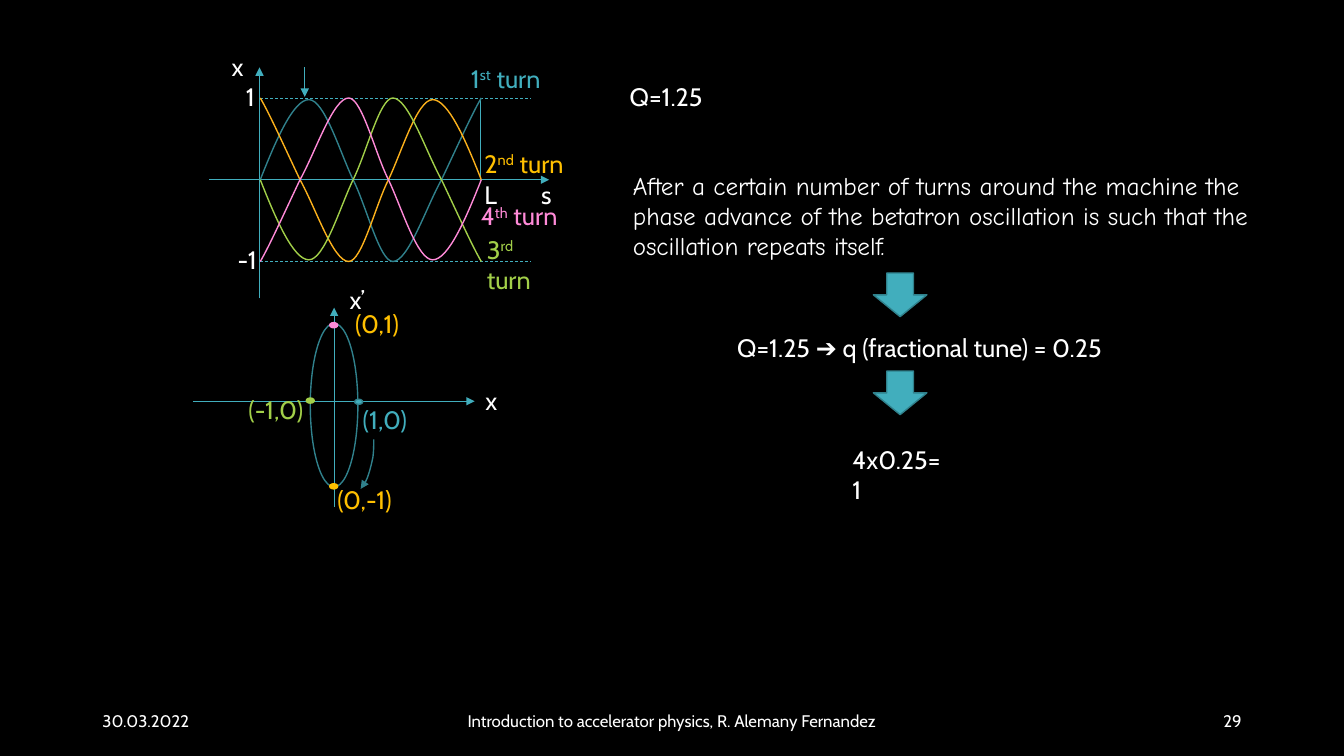
from lxml import etree
from pptx import Presentation, util as u
from pptx.dml.color import RGBColor
from pptx.enum import dml, shapes, text
from pptx.oxml.ns import qn

BLACK = RGBColor(0x00, 0x00, 0x00)
WHITE = RGBColor(0xFF, 0xFF, 0xFF)
TEAL = RGBColor(0x41, 0xAE, 0xBD)
DARK_TEAL = RGBColor(0x30, 0x81, 0x8C)
ORANGE = RGBColor(0xFC, 0xB1, 0x1C)
AMBER = RGBColor(0xFF, 0xC0, 0x00)
GREEN = RGBColor(0xA2, 0xCF, 0x49)
PINK = RGBColor(0xFF, 0x8A, 0xD8)

LABEL_HEIGHT = 1.02
FIRST_TURN = [
    (0, 0.5), (0.07, 0.26), (0.15, 0.01), (0.22, 0.01), (0.29, 0.01), (0.36, 0.33),
    (0.42, 0.5), (0.48, 0.66), (0.54, 1), (0.6, 1), (0.67, 1), (0.75, 0.67),
    (0.82, 0.5), (0.88, 0.33), (0.96, 0.09), (1, 0),
]
ROTATION = [
    (1.6, 2.92), (1.6, 3.07), (1.6, 3.2), (1.58, 3.36), (1.55, 3.53),
    (1.48, 3.79), (1.43, 3.91), (1.37, 4.04), (1.27, 4.17), (1.27, 4.17),
]


def add_label(parent, box, words, color=WHITE, wrap=False, font="Cabin", size=18,
              align=text.PP_ALIGN.LEFT, anchor=text.MSO_ANCHOR.TOP):
    """Add one paragraph of text; parts between carets are raised."""
    frame = parent.shapes.add_textbox(*map(u.Cm, box)).text_frame
    for name, value in {"word_wrap": wrap, "vertical_anchor": anchor}.items():
        setattr(frame, name, value)
    para = frame.paragraphs[0]
    para.alignment = align
    for index, part in enumerate(words.split("^")):
        span = para.add_run()
        span.text = part
        for name, value in {"name": font, "size": u.Pt(size)}.items():
            setattr(span.font, name, value)
        span.font.color.rgb = color
        if index % 2:
            span.font._element.set("baseline", "30000")


def add_labels(parent, left, top, labels):
    """Add labels given by offset, width, words, colour and wrapping."""
    for x, y, width, words, color, wrap in labels:
        add_label(parent, (left + x, top + y, width, LABEL_HEIGHT), words, color, wrap)


def add_arrowhead(line):
    """End a line in a triangle."""
    etree.SubElement(line._get_or_add_ln(), qn("a:tailEnd"), type="triangle")


def add_line(slide, left, top, ends, arrow=False, dashed=False):
    """Draw a thin straight line between two offsets."""
    x1, y1, x2, y2 = ends
    points = (left + x1, top + y1, left + x2, top + y2)
    connector = slide.shapes.add_connector(shapes.MSO_CONNECTOR.STRAIGHT, *map(u.Cm, points))
    connector.line.color.rgb = TEAL
    connector.line.width = u.Pt(0.5)
    if dashed:
        connector.line.dash_style = dml.MSO_LINE.DASH
    if arrow:
        add_arrowhead(connector.line)
    etree.SubElement(connector._element.spPr, qn("a:effectLst"))


def style_shape(shape, fill, outline):
    """Give a shape its fill and outline, without shadow."""
    shape.shadow.inherit = False
    if fill is None:
        shape.fill.background()
    else:
        shape.fill.solid()
        shape.fill.fore_color.rgb = fill
    shape.line.color.rgb = outline
    shape.line.width = u.Pt(1)


def add_preset(slide, kind, box, fill, outline):
    """Add a styled preset shape."""
    style_shape(slide.shapes.add_shape(kind, *map(u.Cm, box)), fill, outline)


def add_curve(parent, controls, color):
    """Draw an open curve through chained cubic control points."""
    start, *others = [tuple(map(u.Cm, point)) for point in controls]
    builder = parent.shapes.build_freeform(*start)
    builder.add_line_segments(others, close=False)
    curve = builder.convert_to_shape()
    segments = list(curve._element.iter(qn("a:lnTo")))
    for first in range(0, len(segments), 3):
        cubic = etree.Element(qn("a:cubicBezTo"))
        segments[first].addprevious(cubic)
        for segment in segments[first:first + 3]:
            cubic.append(segment[0])
            segment.getparent().remove(segment)
    style_shape(curve, None, color)
    return curve


def add_wave_plot(slide, box):
    """Draw the oscillation over four turns around the machine."""
    left, top, width, height = box
    middle = height / 2
    add_line(slide, left, top, (-0.02, 5.05, -0.02, -0.77), arrow=True)
    add_line(slide, left, top, (-1.28, middle, 7.28, middle), arrow=True)
    for level in (0.02, height):
        add_line(slide, left, top, (0, level, 6.83, level), dashed=True)
    add_labels(slide, left, top, [
        (-0.97, -1.3, 0.81, "x", WHITE, False),
        (6.83, 1.92, 1.47, "s", WHITE, True),
        (-0.61, -0.54, 0.81, "1", WHITE, False),
        (-0.82, 3.55, 1.02, "-1", WHITE, False),
        (5.4, 1.92, 0.84, "L", WHITE, False),
    ])
    add_line(slide, left, top, (width - 0.02, 0, width - 0.02, middle))
    turns = [
        (DARK_TEAL, False, False, (5.06, -1, 2.36, "1^st^ turn", TEAL, False)),
        (ORANGE, True, False, (5.4, 1.14, 2.54, "2^nd^ turn", AMBER, False)),
        (GREEN, False, True, (5.46, 3.31, 2.2, "3^rd^ turn", GREEN, True)),
        (PINK, True, True, (5.31, 2.46, 2.46, "4^th^ turn", PINK, False)),
    ]
    for color, mirrored, flipped, label in turns:
        turn = slide.shapes.add_group_shape()
        add_curve(turn, [
            (left + width * (1 - x if mirrored else x), top + height * (1 - y if flipped else y))
            for x, y in FIRST_TURN], color)
        add_labels(turn, left, top, [label])
    add_line(slide, left, top, (1.12, -0.77, 1.12, -0.03), arrow=True)


def add_phase_space(slide, box):
    """Draw the phase space ellipse with the position at each turn."""
    left, top, width, height = box
    add_line(slide, left, top, (0.6, 4.63, 0.6, -0.4), arrow=True)
    add_line(slide, left, top, (-2.95, 1.96, 4.14, 1.96), arrow=True)
    oval = shapes.MSO_SHAPE.OVAL
    add_preset(slide, oval, box, None, DARK_TEAL)
    dots = [(0.49, 4.04, AMBER, AMBER), (-0.1, 1.88, GREEN, GREEN),
            (0.49, -0.02, PINK, PINK), (1.12, 1.91, TEAL, DARK_TEAL)]
    for x, y, fill, outline in dots:
        add_preset(slide, oval, (left + x, top + y, 0.2, 0.13), fill, outline)
    add_labels(slide, left, top, [
        (4.16, 1.43, 0.81, "x", WHITE, False),
        (0.74, -1.11, 0.94, "x’", WHITE, False),
        (1.07, 1.91, 1.68, "(1,0)", TEAL, False),
        (0.43, 3.94, 1.91, "(0,-1)", AMBER, False),
        (-1.81, 1.65, 1.91, "(-1,0)", GREEN, False),
        (0.88, -0.5, 1.68, "(0,1)", AMBER, False),
    ])
    rotation = add_curve(slide, [(left + x, top + y) for x, y in ROTATION], DARK_TEAL)
    add_arrowhead(rotation.line)


def add_argument(slide, box):
    """Write the reasoning from the tune to the repeat count."""
    left, top, width, height = box
    add_label(slide, (left + 0.08, top + 2.23, width, 2.57),
              "After a certain number of turns around the machine the phase advance of the "
              "betatron oscillation is such that the oscillation repeats itself.",
              wrap=True, font="Comic Neue")
    add_labels(slide, left, top, [
        (0, 0, 2.39, "Q=1.25", WHITE, False),
        (2.71, 6.33, 9.75, "Q=1.25 ➔ q (fractional tune) = 0.25", WHITE, False),
        (5.61, height - LABEL_HEIGHT, 2.8, "4x0.25=1", WHITE, True),
    ])
    for y in (4.95, 7.42):
        add_preset(slide, shapes.MSO_SHAPE.DOWN_ARROW, (left + 6.39, top + y, 1.35, 1.1),
                   TEAL, DARK_TEAL)


def add_footer(slide, box):
    """Write date, title and slide number along the bottom."""
    left, top, width, height = box
    side, centre = 7.62, 11.43
    parts = [
        (0, side, "30.03.2022", text.PP_ALIGN.LEFT),
        ((width - centre) / 2, centre,
         "Introduction to accelerator physics, R. Alemany Fernandez", text.PP_ALIGN.CENTER),
        (width - side, side, "29", text.PP_ALIGN.RIGHT),
    ]
    for x, part_width, words, align in parts:
        add_label(slide, (left + x, top, part_width, height), words, wrap=True, size=12,
                  align=align, anchor=text.MSO_ANCHOR.MIDDLE)


def main():
    """Build the slide and save it."""
    deck = Presentation()
    deck.slide_width, deck.slide_height = u.Cm(33.87), u.Cm(19.05)
    slide = deck.slides.add_slide(deck.slide_layouts[6])
    slide.background.fill.solid()
    slide.background.fill.fore_color.rgb = BLACK
    add_wave_plot(slide, (6.56, 2.47, 5.57, 4.12))
    add_phase_space(slide, (7.82, 8.15, 1.2, 4.12))
    add_argument(slide, (15.62, 1.93, 16.94, 10.16))
    add_footer(slide, (2.33, 17.65, 29.21, 1.02))
    deck.save("out.pptx")


if __name__ == "__main__":
    main()
